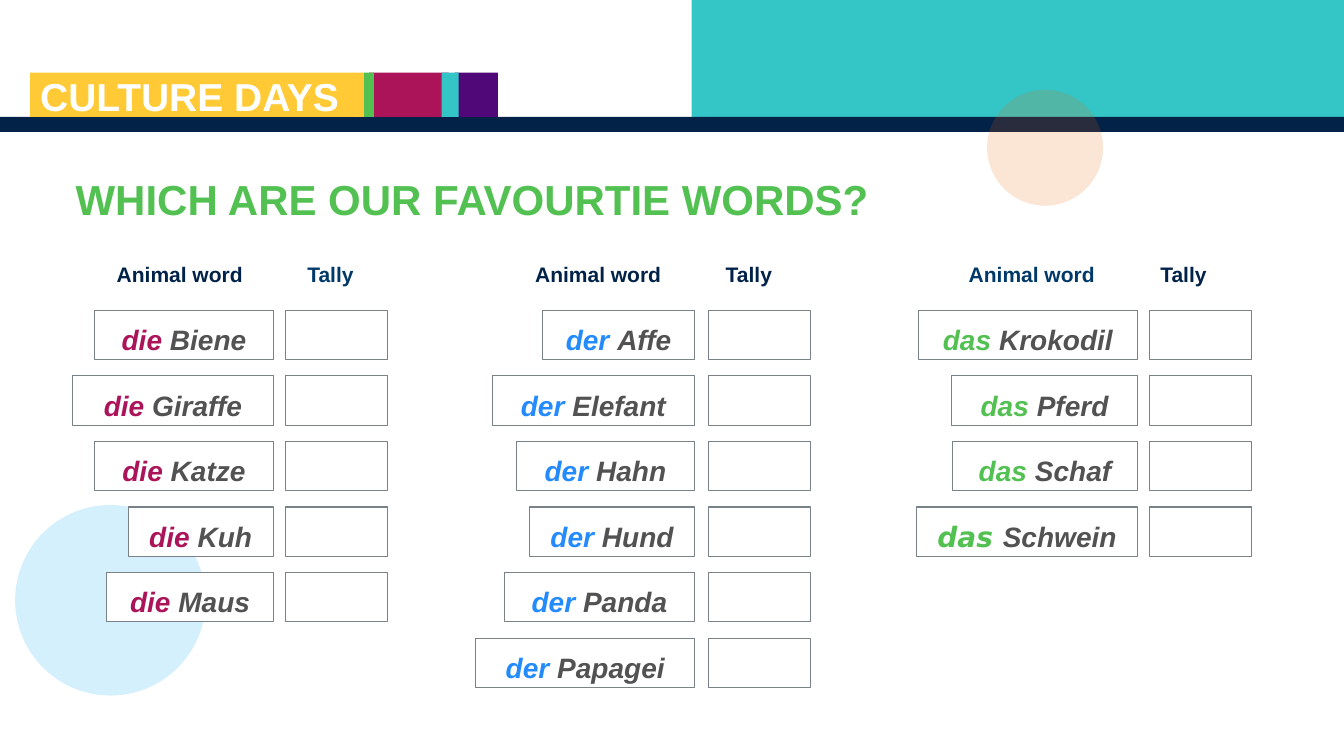
from lxml import etree
from pptx import Presentation
from pptx.dml.color import RGBColor
from pptx.enum.shapes import MSO_SHAPE
from pptx.enum.text import MSO_ANCHOR, MSO_AUTO_SIZE, PP_ALIGN
from pptx.oxml.ns import qn
from pptx.util import Inches, Pt

RECTANGLE, OVAL = MSO_SHAPE.RECTANGLE, MSO_SHAPE.OVAL
TOP, MIDDLE, BOTTOM = MSO_ANCHOR.TOP, MSO_ANCHOR.MIDDLE, MSO_ANCHOR.BOTTOM
LEFT, CENTER = PP_ALIGN.LEFT, PP_ALIGN.CENTER
NO_AUTOFIT = MSO_AUTO_SIZE.NONE

# Content
BANNER = "CULTURE DAYS"
TITLE = "WHICH ARE OUR FAVOURTIE WORDS?"
WORD_HEADING, TALLY_HEADING = "Animal word", "Tally"
# Each word has the width of its box
COLUMNS = [
    {"article": "die", "color": "crimson", "right": 2.71, "tally": 2.83,
     "headings": [(1.06, "ink"), (2.95, "blue ink")],
     "words": [("Biene", 1.77), ("Giraffe", 1.99), ("Katze", 1.77),
               ("Kuh", 1.44), ("Maus", 1.65)]},
    {"article": "der", "color": "blue", "right": 6.89, "tally": 7.03,
     "headings": [(5.21, "ink"), (7.1, "ink")],
     "words": [("Affe", 1.51), ("Elefant", 2.01), ("Hahn", 1.77),
               ("Hund", 1.64), ("Panda", 1.89), ("Papagei", 2.17)]},
    {"article": "das", "color": "green", "right": 11.28, "tally": 11.4,
     "headings": [(9.51, "blue ink"), (11.41, "ink")],
     "words": [("Krokodil", 2.17), ("Pferd", 1.84), ("Schaf", 1.83),
               ("Schwein", 2.19)]},
]

# Style
COLORS = {
    "white": "FFFFFF", "teal": "34C6C6", "navy": "032248", "purple": "500778",
    "crimson": "AC145A", "green": "52C152", "yellow": "FFCA36",
    "blue": "248BFF", "gray": "525252", "border": "788287",
    "ink": "002248", "blue ink": "003969", "orange": "EB6400", "sky": "5AC8F5",
}
FONT = "Arial"
ARTICLE_FONTS = {"Schwein": "DejaVu Sans"}
ROW_TOP, ROW_PITCH, ROW_HEIGHT = 3.08, 0.65, 0.49
TALLY_WIDTH = 1.01
HEADING_TOP, HEADING_HEIGHT = 2.55, 0.37
HEADING_WIDTHS = (2.06, 1)
STRIPE_TOP, STRIPE_HEIGHT = 0.72, 0.44

# Left, top, width, height, colour
BANDS = [
    (6.86, 0, 6.48, 1.16, "teal"),
    (0, 1.16, 13.33, 0.15, "navy"),
] + [(left, STRIPE_TOP, width, STRIPE_HEIGHT, color) for left, width, color in [
    (4.51, 0.43, "purple"), (3.66, 0.79, "crimson"), (4.38, 0.17, "teal"),
    (3.61, 0.1, "green"), (0.3, 3.31, "yellow")]]
# Left, top, diameter, colour, opacity in percent
CIRCLES = [(9.79, 0.89, 1.15, "orange", 16), (0.15, 5.01, 1.89, "sky", 26)]


def rgb(name):
    return RGBColor.from_string(COLORS[name])


def add_shape(page, kind, left, top, width, height, fill, border=None):
    shape = page.shapes.add_shape(
        kind, Inches(left), Inches(top), Inches(width), Inches(height))
    shape.shadow.inherit = False
    shape.fill.solid()
    shape.fill.fore_color.rgb = rgb(fill)
    if border:
        shape.line.color.rgb = rgb(border)
        shape.line.width = Pt(0.75)
    else:
        shape.line.fill.background()
    return shape


def set_opacity(shape, percent):
    color = shape.fill._xPr.find(qn("a:solidFill"))[0]
    etree.SubElement(color, qn("a:alpha")).set("val", str(percent * 1000))


def add_span(para, text, size, color, font=FONT, italic=False):
    span = para.add_run()
    span.text = text
    span.font.name = font
    span.font.size = Pt(size)
    span.font.bold = True
    span.font.italic = italic
    span.font.color.rgb = rgb(color)


def add_label(page, left, top, width, height, text, size, color,
              anchor=TOP, spacing=1.0):
    box = page.shapes.add_textbox(
        Inches(left), Inches(top), Inches(width), Inches(height))
    frame = box.text_frame
    frame.word_wrap = True
    frame.vertical_anchor = anchor
    para = frame.paragraphs[0]
    para.line_spacing = spacing
    add_span(para, text, size, color)


def add_title(page):
    title = page.shapes.title
    title.left, title.top = Inches(0.75), Inches(1.68)
    title.width, title.height = Inches(9.26), Inches(0.67)
    frame = title.text_frame
    frame.auto_size = NO_AUTOFIT
    frame.vertical_anchor = MIDDLE
    frame.margin_left = frame.margin_right = 0
    frame.margin_top = frame.margin_bottom = 0
    para = frame.paragraphs[0]
    para.alignment = LEFT
    para.line_spacing = 0.8
    add_span(para, TITLE, 30, "green")


def add_word(page, column, word, width, top):
    box = add_shape(page, RECTANGLE, column["right"] - width, top,
                    width, ROW_HEIGHT, "white", "border")
    frame = box.text_frame
    frame.vertical_anchor = MIDDLE
    frame.margin_top = Inches(0.09)
    para = frame.paragraphs[0]
    para.alignment = CENTER
    para.line_spacing = 1.14
    add_span(para, column["article"] + " ", 20, column["color"],
             ARTICLE_FONTS.get(word, FONT), italic=True)
    add_span(para, word, 20, "gray", italic=True)


def add_column(page, column):
    headings = zip((WORD_HEADING, TALLY_HEADING), column["headings"], HEADING_WIDTHS)
    for text, (left, color), width in headings:
        add_label(page, left, HEADING_TOP, width, HEADING_HEIGHT, text, 15, color)
    for row, (word, width) in enumerate(column["words"]):
        top = ROW_TOP + row * ROW_PITCH
        add_word(page, column, word, width, top)
        add_shape(page, RECTANGLE, column["tally"], top,
                  TALLY_WIDTH, ROW_HEIGHT, "white", "border")


def main():
    deck = Presentation()
    deck.slide_width, deck.slide_height = Inches(13.33), Inches(7.5)
    page = deck.slides.add_slide(deck.slide_layouts[5])

    # Header
    for left, top, width, height, color in BANDS:
        add_shape(page, RECTANGLE, left, top, width, height, color)
    add_label(page, 0.3, 0.75, 4.15, 0.48, BANNER, 27.8, "white", BOTTOM, 0.8)
    add_title(page)

    # Background circles
    for left, top, diameter, color, opacity in CIRCLES:
        circle = add_shape(page, OVAL, left, top, diameter, diameter, color)
        set_opacity(circle, opacity)

    # Word and tally columns
    for column in COLUMNS:
        add_column(page, column)

    deck.save("out.pptx")


if __name__ == "__main__":
    main()
